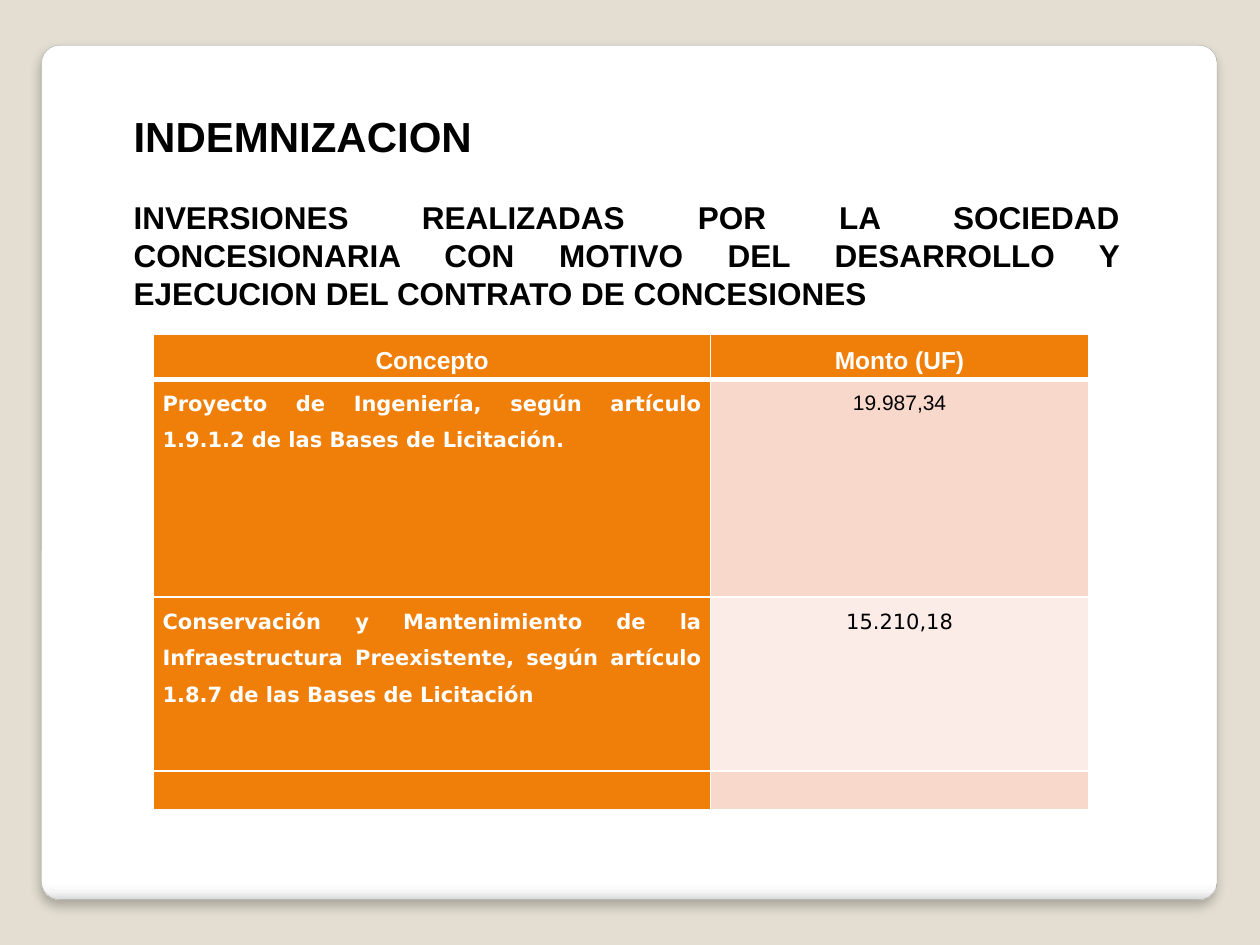
"""Build the compensation slide with its table of concession investments."""
from lxml import etree
from pptx import Presentation
from pptx.dml.color import RGBColor
from pptx.enum.shapes import MSO_SHAPE
from pptx.enum.text import MSO_ANCHOR, MSO_AUTO_SIZE, PP_ALIGN
from pptx.oxml import parse_xml
from pptx.util import Inches, Pt

CENTER, JUSTIFY = PP_ALIGN.CENTER, PP_ALIGN.JUSTIFY
TOP, NO_AUTOFIT = MSO_ANCHOR.TOP, MSO_AUTO_SIZE.NONE
ROUNDED = MSO_SHAPE.ROUNDED_RECTANGLE
NS = "http://schemas.openxmlformats.org/drawingml/2006/main"

BACKGROUND, CARD_LINE = "E3DED1", "A4A4A4"
ORANGE, PINK, PALE_PINK = "F07F09", "F9D8CC", "FCECE7"
WHITE, BLACK = "FFFFFF", "000000"
SANS, WIDE = "Arial", "DejaVu Sans"

CARD_STOPS = [(0, WHITE), (98, WHITE), (99, "F7F7F7"), (100, "DADADA")]
HEADING = [
    ("INDEMNIZACION", 24, 0),
    ("INVERSIONES REALIZADAS POR LA SOCIEDAD CONCESIONARIA CON MOTIVO DEL "
     "DESARROLLO Y EJECUCION DEL CONTRATO DE CONCESIONES", 18, 21),
]
HEADER = ("Concepto", "Monto (UF)")
INVESTMENTS = [
    ("Proyecto de Ingeniería, según artículo 1.9.1.2 de las Bases de Licitación.",
     "19.987,34", SANS, PINK),
    ("Conservación y Mantenimiento de la Infraestructura Preexistente, "
     "según artículo 1.8.7 de las Bases de Licitación", "15.210,18", WIDE, PALE_PINK),
    ("", "", SANS, PINK),
]
COLUMN_WIDTHS = (4.42, 3)
ROW_HEIGHTS = (0.36, 1.73, 1.38, 0.31)


def rgb(value):
    return RGBColor.from_string(value)


def style_paragraph(paragraph, size, font, color, bold, align):
    paragraph.alignment = align
    for run in paragraph.runs:
        run.font.size = Pt(size)
        run.font.name = font
        run.font.bold = bold
        run.font.color.rgb = rgb(color)


def add_card(slide):
    card = slide.shapes.add_shape(
        ROUNDED, Inches(0.33), Inches(0.36), Inches(9.33), Inches(6.78))
    card.adjustments[0] = 0.021
    card.line.color.rgb = rgb(CARD_LINE)
    card.line.width = Pt(0.16)
    card.fill.gradient()
    gradient = card._element.spPr.find(f"{{{NS}}}gradFill")
    stops = "".join(
        f'<a:gs pos="{position * 1000}"><a:srgbClr val="{color}"/></a:gs>'
        for position, color in CARD_STOPS)
    gradient.getparent().replace(gradient, parse_xml(
        f'<a:gradFill xmlns:a="{NS}" rotWithShape="1"><a:gsLst>{stops}</a:gsLst>'
        '<a:lin ang="5400000" scaled="0"/></a:gradFill>'))
    card.shadow.inherit = False
    effects = card._element.spPr.find(f"{{{NS}}}effectLst")
    effects.append(parse_xml(
        f'<a:outerShdw xmlns:a="{NS}" blurRad="{Pt(6)}" dist="{Pt(4)}" dir="5400000" '
        f'rotWithShape="0"><a:srgbClr val="{BLACK}"><a:alpha val="25000"/>'
        '</a:srgbClr></a:outerShdw>'))
    slide.shapes._spTree.insert(2, card._element)


def fill_heading(title):
    title.left, title.top = Inches(0.96), Inches(0.83)
    title.width, title.height = Inches(8.03), Inches(1.71)
    frame = title.text_frame
    frame.word_wrap = True
    frame.auto_size = NO_AUTOFIT
    frame.vertical_anchor = TOP
    frame.text = "\n".join(text for text, _, _ in HEADING)
    for paragraph, (_, size, gap) in zip(frame.paragraphs, HEADING):
        paragraph.space_before = Pt(gap)
        style_paragraph(paragraph, size, SANS, BLACK, True, JUSTIFY)


def add_borders(cell, widths):
    properties = cell._tc.get_or_add_tcPr()
    for side, width in zip("LRTB", widths):
        line = etree.SubElement(properties, f"{{{NS}}}ln{side}", w=str(Pt(width)))
        solid = etree.SubElement(line, f"{{{NS}}}solidFill")
        etree.SubElement(solid, f"{{{NS}}}srgbClr", val=WHITE)


def fill_cell(cell, text, size, font, color, bold, align, fill, borders):
    cell.margin_left = cell.margin_right = Inches(0.07)
    cell.margin_top = cell.margin_bottom = 0
    add_borders(cell, borders)
    cell.fill.solid()
    cell.fill.fore_color.rgb = rgb(fill)
    if text:
        cell.text_frame.text = text
        paragraph = cell.text_frame.paragraphs[0]
        paragraph.line_spacing = 1.5
        paragraph.space_after = Pt(10)
        style_paragraph(paragraph, size, font, color, bold, align)


def add_investments(slide):
    table = slide.shapes.add_table(
        len(ROW_HEIGHTS), len(COLUMN_WIDTHS), Inches(1.22), Inches(2.65),
        Inches(sum(COLUMN_WIDTHS)), Inches(sum(ROW_HEIGHTS))).table
    table.horz_banding = False
    for column, width in zip(table.columns, COLUMN_WIDTHS):
        column.width = Inches(width)
    for row, height in zip(table.rows, ROW_HEIGHTS):
        row.height = Inches(height)
    for column, label in enumerate(HEADER):
        fill_cell(table.cell(0, column), label, 14, SANS, WHITE, True, CENTER,
                  ORANGE, (1, 1, 1, 3))
    for row, (concept, amount, font, tint) in enumerate(INVESTMENTS, 1):
        borders = (1, 1, 3 if row == 1 else 1, 1)
        fill_cell(table.cell(row, 0), concept, 12, WIDE, WHITE, True, JUSTIFY,
                  ORANGE, borders)
        fill_cell(table.cell(row, 1), amount, 12, font, BLACK, False, CENTER,
                  tint, borders)


def main():
    deck = Presentation()
    deck.slide_width, deck.slide_height = Inches(10), Inches(7.5)
    slide = deck.slides.add_slide(deck.slide_layouts[5])
    slide.background.fill.solid()
    slide.background.fill.fore_color.rgb = rgb(BACKGROUND)
    add_card(slide)
    fill_heading(slide.shapes.title)
    add_investments(slide)
    deck.save("out.pptx")


if __name__ == "__main__":
    main()
